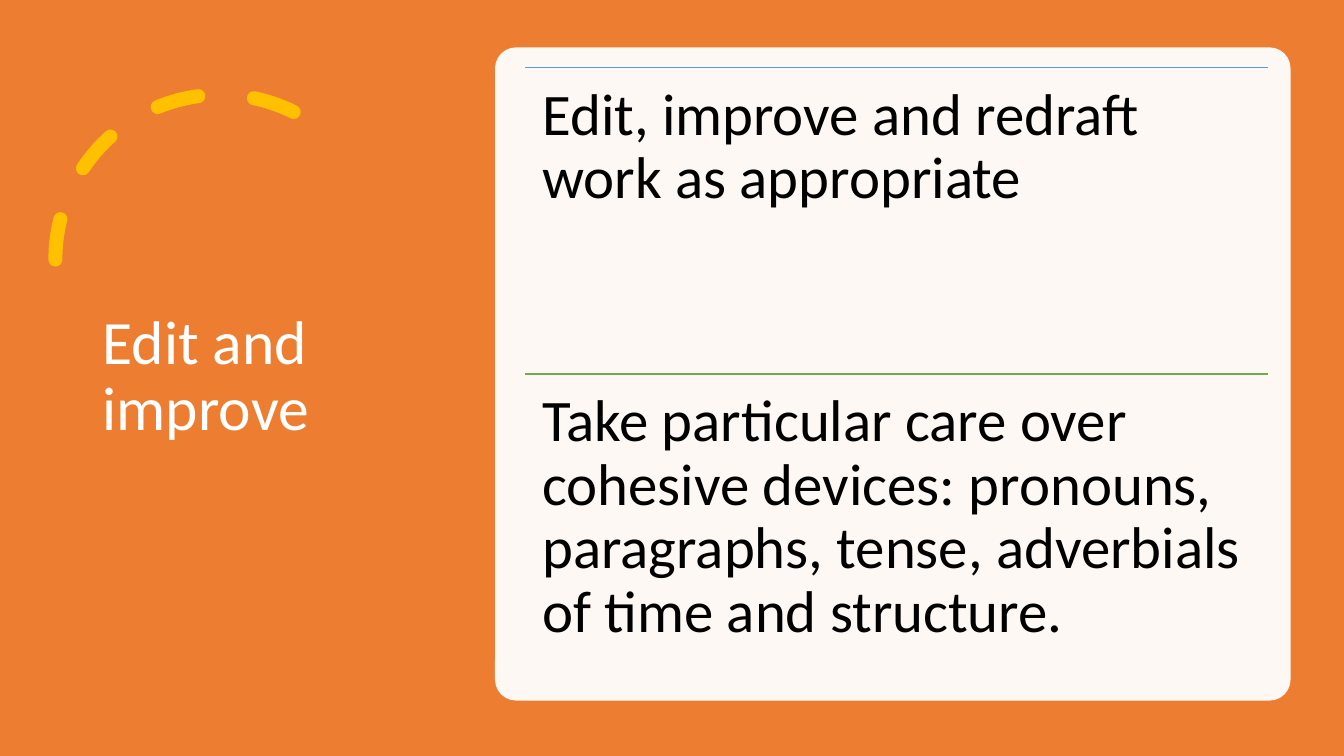
import pptx
import pptx.util
import pptx.dml.color
import pptx.enum.dml
import pptx.enum.shapes
import pptx.enum.text
import lxml.etree
from pptx.oxml.ns import qn

Inches, Pt = pptx.util.Inches, pptx.util.Pt
SHAPE = pptx.enum.shapes.MSO_SHAPE
ANCHOR = pptx.enum.text.MSO_ANCHOR

# Content
TITLE = "Edit and improve"
POINTS = [
    ("Edit, improve and redraft work as appropriate", "blue"),
    ("Take particular care over cohesive devices: pronouns, paragraphs, "
     "tense, adverbials of time and structure.", "green"),
]
COLORS = {"orange": "ED7D31", "gold": "FFC000", "white": "FFFFFF",
          "black": "000000", "blue": "5B9BD5", "green": "70AD47"}
LEFT, TOP, WIDTH, STEP = 5.21, 0.67, 7.37, 3.04


def color(name):
    return pptx.dml.color.RGBColor.from_string(COLORS[name])


def add_box(slide, kind, box, fill):
    shape = slide.shapes.add_shape(kind, *map(Inches, box))
    shape.shadow.inherit = False
    shape.fill.solid()
    shape.fill.fore_color.rgb = color(fill)
    shape.line.fill.background()
    return shape


def add_text(slide, box, text, size, ink, anchor, pad):
    frame = slide.shapes.add_textbox(*map(Inches, box)).text_frame
    frame.word_wrap = True
    frame.vertical_anchor = anchor
    frame.margin_left = frame.margin_right = Inches(pad[0])
    frame.margin_top = frame.margin_bottom = Inches(pad[1])
    para = frame.paragraphs[0]
    para.text = text
    para.line_spacing = 0.9
    para.font.name = "Calibri"
    para.font.size = Pt(size)
    para.font.color.rgb = color(ink)


def add_rule(slide, top, ink):
    rule = slide.shapes.add_connector(
        pptx.enum.shapes.MSO_CONNECTOR.STRAIGHT,
        Inches(LEFT), Inches(top), Inches(LEFT + WIDTH), Inches(top))
    rule.line.color.rgb = color(ink)
    rule.line.width = Pt(1)
    lxml.etree.SubElement(rule._element.spPr, qn("a:effectLst"))


def add_arc(slide):
    arc = slide.shapes.add_shape(
        SHAPE.ARC, Inches(0.55), Inches(0.94), Inches(3.27), Inches(3.27))
    arc.shadow.inherit = False
    arc.adjustments[0] = 146.13
    arc.adjustments[1] = 0
    arc.fill.background()
    arc.line.color.rgb = color("gold")
    arc.line.width = Pt(10)
    arc.line.dash_style = pptx.enum.dml.MSO_LINE.DASH
    props = arc._element.spPr
    props.find(qn("a:ln")).set("cap", "rnd")
    props.find(qn("a:xfrm")).set("flipH", "1")


def main():
    deck = pptx.Presentation()
    deck.slide_width, deck.slide_height = Inches(13.33), Inches(7.5)
    slide = deck.slides.add_slide(deck.slide_layouts[6])

    # Backdrop, dashed arc and title
    add_box(slide, SHAPE.RECTANGLE, (0, 0, 13.33, 7.5), "orange")
    add_arc(slide)
    add_text(slide, (0.92, 0.7, 3.23, 6.09), TITLE, 44, "white",
             ANCHOR.MIDDLE, (0.1, 0.05))

    # Translucent panel
    panel = add_box(slide, SHAPE.ROUNDED_RECTANGLE,
                    (4.91, 0.47, 7.89, 6.48), "white")
    panel.adjustments[0] = 0.032
    tint = panel._element.spPr.find(qn("a:solidFill"))[0]
    lxml.etree.SubElement(tint, qn("a:alpha")).set("val", "95000")

    # Points, each under its rule
    for row, (text, ink) in enumerate(POINTS):
        top = TOP + row * STEP
        add_rule(slide, top, ink)
        add_text(slide, (LEFT, top, WIDTH, STEP), text, 42, "black",
                 ANCHOR.TOP, (0.17, 0.17))

    deck.save("out.pptx")


if __name__ == "__main__":
    main()
